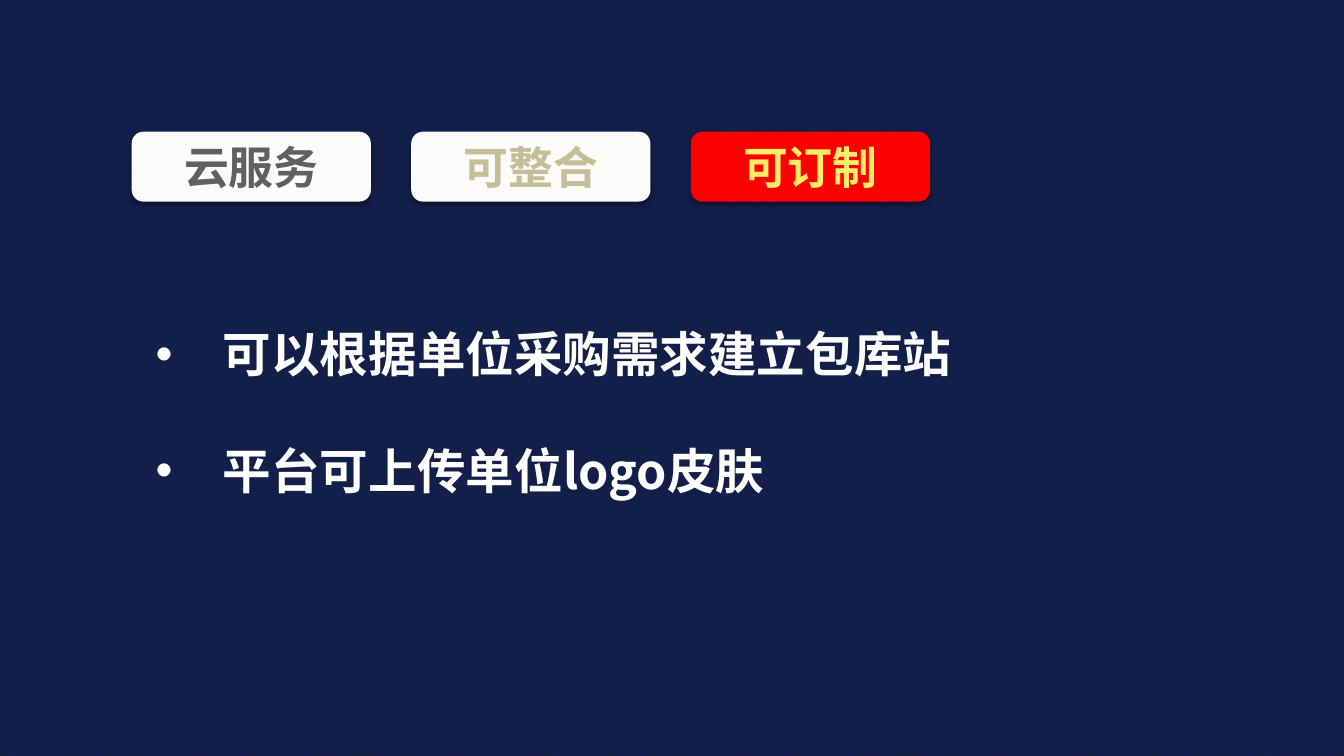
from dataclasses import dataclass

from lxml.etree import SubElement
from pptx import Presentation
from pptx.dml.color import RGBColor
from pptx.enum.dml import MSO_PATTERN
from pptx.enum.shapes import MSO_SHAPE
from pptx.enum.text import MSO_ANCHOR, MSO_AUTO_SIZE, PP_ALIGN
from pptx.oxml.ns import qn
from pptx.util import Inches, Pt


@dataclass(frozen=True)
class Theme:
    """Colours, font and type sizes of the slide."""
    font: str = "Noto Sans CJK SC"
    navy: str = "0F243E"
    stripe: str = "29008E"
    white: str = "FFFFFF"
    plain: str = "FCFBF9"
    active: str = "FF0000"
    gray: str = "606060"
    sand: str = "C4BD97"
    yellow: str = "FFED65"
    tab_size: int = 24
    body_size: int = 26


THEME = Theme()
TABS = [
    ("云服务", THEME.plain, THEME.gray),
    ("可整合", THEME.plain, THEME.sand),
    ("可订制", THEME.active, THEME.yellow),
]
POINTS = ["可以根据单位采购需求建立包库站", "平台可上传单位logo皮肤"]


def set_background(page):
    """Fill the page with dark diagonal stripes."""
    fill = page.background.fill
    fill.patterned()
    fill.pattern = MSO_PATTERN.DARK_UPWARD_DIAGONAL
    fill.fore_color.rgb = RGBColor.from_string(THEME.stripe)
    fill.back_color.rgb = RGBColor.from_string(THEME.navy)


def add_span(para, text, size, color):
    """Add a bold run in the theme font."""
    span = para.add_run()
    span.text = text
    formats = {"name": THEME.font, "size": Pt(size), "bold": True}
    for name, value in formats.items():
        setattr(span.font, name, value)
    span.font.color.rgb = RGBColor.from_string(color)
    SubElement(span.font._element, qn("a:ea"), typeface=THEME.font)


def add_shadow(shape):
    """Give a shape a soft shadow straight below it."""
    shape.shadow.inherit = False
    effects = shape._element.spPr.find(qn("a:effectLst"))
    formats = {"blurRad": Pt(3.1), "dist": Pt(1.8), "dir": 90 * 60000, "rotWithShape": 0}
    shadow = SubElement(effects, qn("a:outerShdw"))
    for name, value in formats.items():
        shadow.set(name, str(value))
    color = SubElement(shadow, qn("a:srgbClr"), val="000000")
    SubElement(color, qn("a:alpha"), val="35000")


def add_tab(page, left, text, fill, color):
    """Add one rounded label of the tab row."""
    tab = page.shapes.add_shape(
        MSO_SHAPE.ROUNDED_RECTANGLE, Inches(left), Inches(0.98), Inches(1.78), Inches(0.52))
    tab.fill.solid()
    tab.fill.fore_color.rgb = RGBColor.from_string(fill)
    tab.line.fill.background()
    add_shadow(tab)
    tab.text_frame.vertical_anchor = MSO_ANCHOR.MIDDLE
    para = tab.text_frame.paragraphs[0]
    para.alignment = PP_ALIGN.CENTER
    add_span(para, text, THEME.tab_size, color)


def add_bullets(page, points):
    """Add the bulleted list, one paragraph for each point."""
    box = page.shapes.add_textbox(Inches(1.06), Inches(1.93), Inches(6.18), Inches(1.85))
    frame = box.text_frame
    formats = {"word_wrap": False, "auto_size": MSO_AUTO_SIZE.SHAPE_TO_FIT_TEXT}
    for name, value in formats.items():
        setattr(frame, name, value)
    for index, text in enumerate(points):
        para = frame.add_paragraph() if index else frame.paragraphs[0]
        properties = para._p.get_or_add_pPr()
        properties.set("marL", str(Inches(0.5)))
        properties.set("indent", str(Inches(-0.5)))
        SubElement(properties, qn("a:buFont"), typeface="Arial")
        SubElement(properties, qn("a:buChar"), char="•")
        para.line_spacing = 2.0
        add_span(para, text, THEME.body_size, THEME.white)


def main():
    """Build the slide and save it."""
    deck = Presentation()
    deck.slide_width, deck.slide_height = Inches(10), Inches(10 * 9 / 16)
    page = deck.slides.add_slide(deck.slide_layouts[6])
    set_background(page)
    for index, (text, fill, color) in enumerate(TABS):
        add_tab(page, 0.98 + 2.08 * index, text, fill, color)
    add_bullets(page, POINTS)
    deck.save("out.pptx")


if __name__ == "__main__":
    main()
